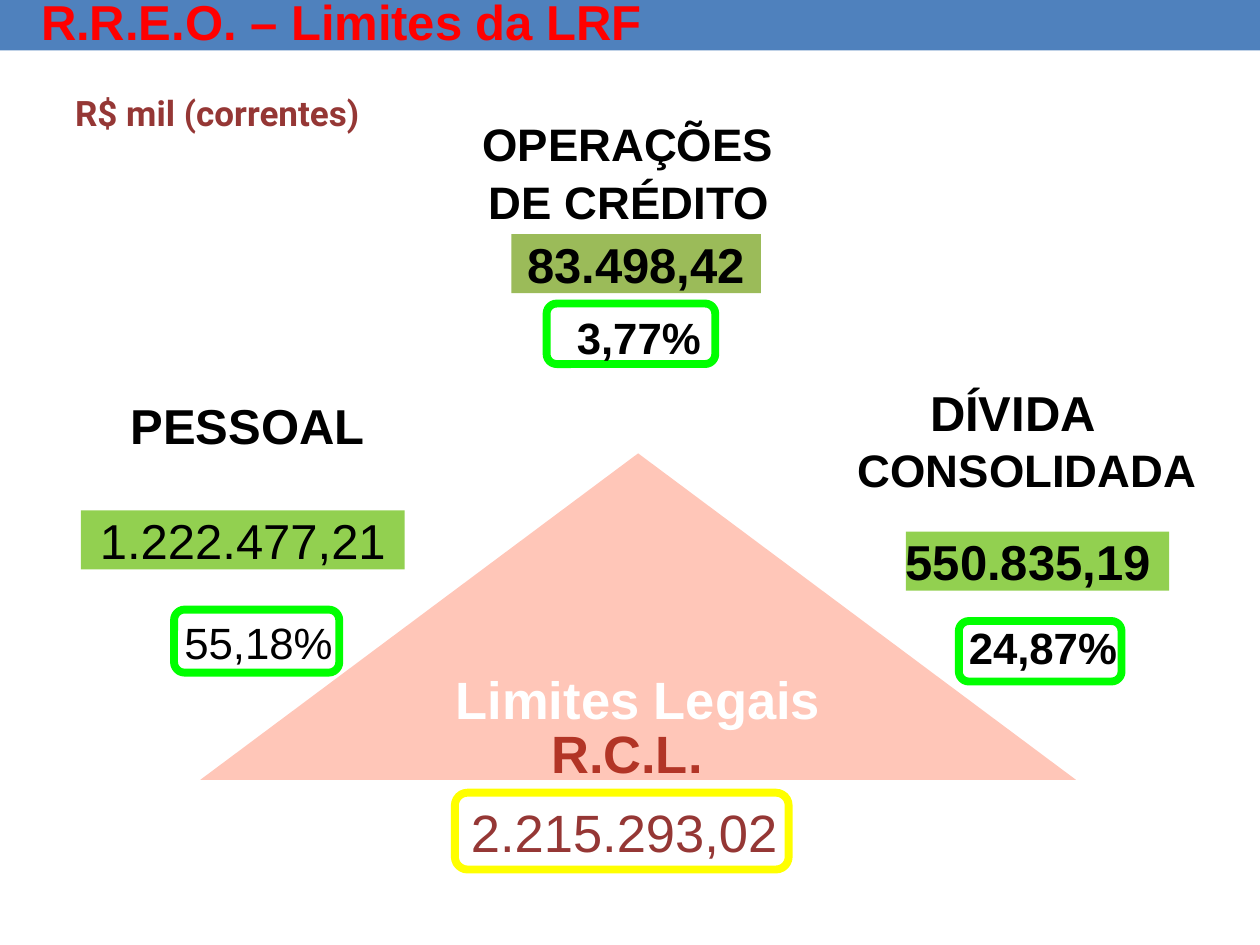
from lxml import etree
from pptx import Presentation
from pptx.dml.color import RGBColor
from pptx.enum.shapes import MSO_SHAPE
from pptx.enum.text import MSO_ANCHOR, PP_ALIGN
from pptx.oxml.ns import qn
from pptx.util import Cm, Pt

RECTANGLE = MSO_SHAPE.RECTANGLE
ROUNDED = MSO_SHAPE.ROUNDED_RECTANGLE
TRIANGLE = MSO_SHAPE.ISOSCELES_TRIANGLE
LEFT, CENTER, RIGHT = PP_ALIGN.LEFT, PP_ALIGN.CENTER, PP_ALIGN.RIGHT
TOP, MIDDLE = MSO_ANCHOR.TOP, MSO_ANCHOR.MIDDLE

BLACK = RGBColor(0x00, 0x00, 0x00)
WHITE = RGBColor(0xFF, 0xFF, 0xFF)
RED = RGBColor(0xFF, 0x00, 0x00)
ORANGE_RED = RGBColor(0xFF, 0x33, 0x00)
MAROON = RGBColor(0x95, 0x37, 0x35)
BLUE = RGBColor(0x4F, 0x81, 0xBD)
GREEN = RGBColor(0x92, 0xD0, 0x50)
OLIVE = RGBColor(0x9B, 0xBB, 0x59)
LIME = RGBColor(0x00, 0xFF, 0x00)
YELLOW = RGBColor(0xFF, 0xFF, 0x00)


def add_panel(kind, place, fill=None, line=None):
    """Add a flat shape at place (left, top, width, height in cm)."""
    shape = page.shapes.add_shape(kind, *map(Cm, place))
    shape.shadow.inherit = False
    if fill is None:
        shape.fill.background()
    else:
        shape.fill.solid()
        shape.fill.fore_color.rgb = fill
    if line is None:
        shape.line.fill.background()
    else:
        shape.line.color.rgb = line
        shape.line.width = Pt(4.5)
    return shape


def write(box, text, size, color=BLACK, bold=True, align=CENTER,
          anchor=TOP, wrap=True, inset=None, name="Arial"):
    frame = box.text_frame
    frame.word_wrap = wrap
    frame.vertical_anchor = anchor
    if inset is not None:
        for side in ("left", "top", "right", "bottom"):
            setattr(frame, f"margin_{side}", Cm(inset))
    para = frame.paragraphs[0]
    para.alignment = align
    span = para.add_run()
    span.text = text
    for key, value in {"name": name, "size": Pt(size), "bold": bold}.items():
        setattr(span.font, key, value)
    span.font.color.rgb = color


deck = Presentation()
deck.slide_width, deck.slide_height = Cm(25.4), Cm(19.05)
page = deck.slides.add_slide(deck.slide_layouts[6])

# Title bar and unit note
add_panel(RECTANGLE, (0, 0, 25.4, 1.02), BLUE)
title = page.shapes.add_textbox(Cm(0.51), Cm(-0.3), Cm(12.75), Cm(1.45))
write(title, "R.R.E.O. – Limites da LRF", 28, RED, wrap=False)
unit = page.shapes.add_textbox(Cm(0.46), Cm(1.73), Cm(7.04), Cm(1.12))
write(unit, "R$ mil (correntes)", 20, MAROON, align=RIGHT, wrap=False, name="Roboto")

# Frames around the percentages
for place in (
    (3.51, 12.29, 3.33, 1.27),
    (11.02, 6.12, 3.4, 1.22),
    (19.33, 12.52, 3.28, 1.22),
):
    add_panel(ROUNDED, place, line=LIME)

# Headings, amounts and percentages: place, fill, text, size, bold, alignment
labels = [
    ((2.26, 7.98, 5.46, 1.19), WHITE, "PESSOAL", 28, True, CENTER),
    ((1.63, 10.29, 6.53, 1.19), GREEN, "1.222.477,21", 28, False, CENTER),
    ((3.43, 12.42, 3.56, 1.24), None, "55,18%", 25, False, CENTER),
    ((9.5, 2.34, 6.32, 1.12), WHITE, "OPERAÇÕES", 26, True, CENTER),
    ((9.63, 3.51, 6.1, 1.12), WHITE, "DE CRÉDITO", 26, True, CENTER),
    ((10.31, 4.72, 5.03, 1.19), OLIVE, "83.498,42", 28, True, CENTER),
    ((11.63, 6.27, 2.69, 1.07), None, "3,77%", 25, True, LEFT),
    ((18.75, 7.72, 3.76, 1.19), WHITE, "DÍVIDA", 28, True, LEFT),
    ((16.81, 8.92, 7.32, 1.12), WHITE, "CONSOLIDADA", 26, True, RIGHT),
    ((18.26, 10.72, 5.31, 1.19), GREEN, "550.835,19", 28, True, LEFT),
    ((19.53, 12.52, 3.07, 1.07), None, "24,87%", 25, True, LEFT),
]
for place, fill, text, size, bold, align in labels:
    if fill is None:
        box = page.shapes.add_textbox(*map(Cm, place))
    else:
        box = add_panel(RECTANGLE, place, fill)
    write(box, text, size, bold=bold, align=align, inset=0)

# Revenue base and the translucent triangle above it
base = add_panel(ROUNDED, (10.8, 14.53, 3.68, 1.3))
write(base, "R.C.L.", 30, MAROON, anchor=MIDDLE, wrap=False)
total = add_panel(ROUNDED, (9.17, 15.98, 6.73, 1.55), line=YELLOW)
write(total, "2.215.293,02", 30, MAROON, bold=False, align=LEFT, anchor=MIDDLE, wrap=False)
triangle = add_panel(TRIANGLE, (4.04, 9.14, 17.65, 6.58), ORANGE_RED)
tint = triangle.fill._xPr.find(qn("a:solidFill"))[0]
etree.SubElement(tint, qn("a:alpha")).set("val", "28000")
write(triangle, "Limites Legais", 30, WHITE, anchor=MIDDLE)

deck.save("out.pptx")
